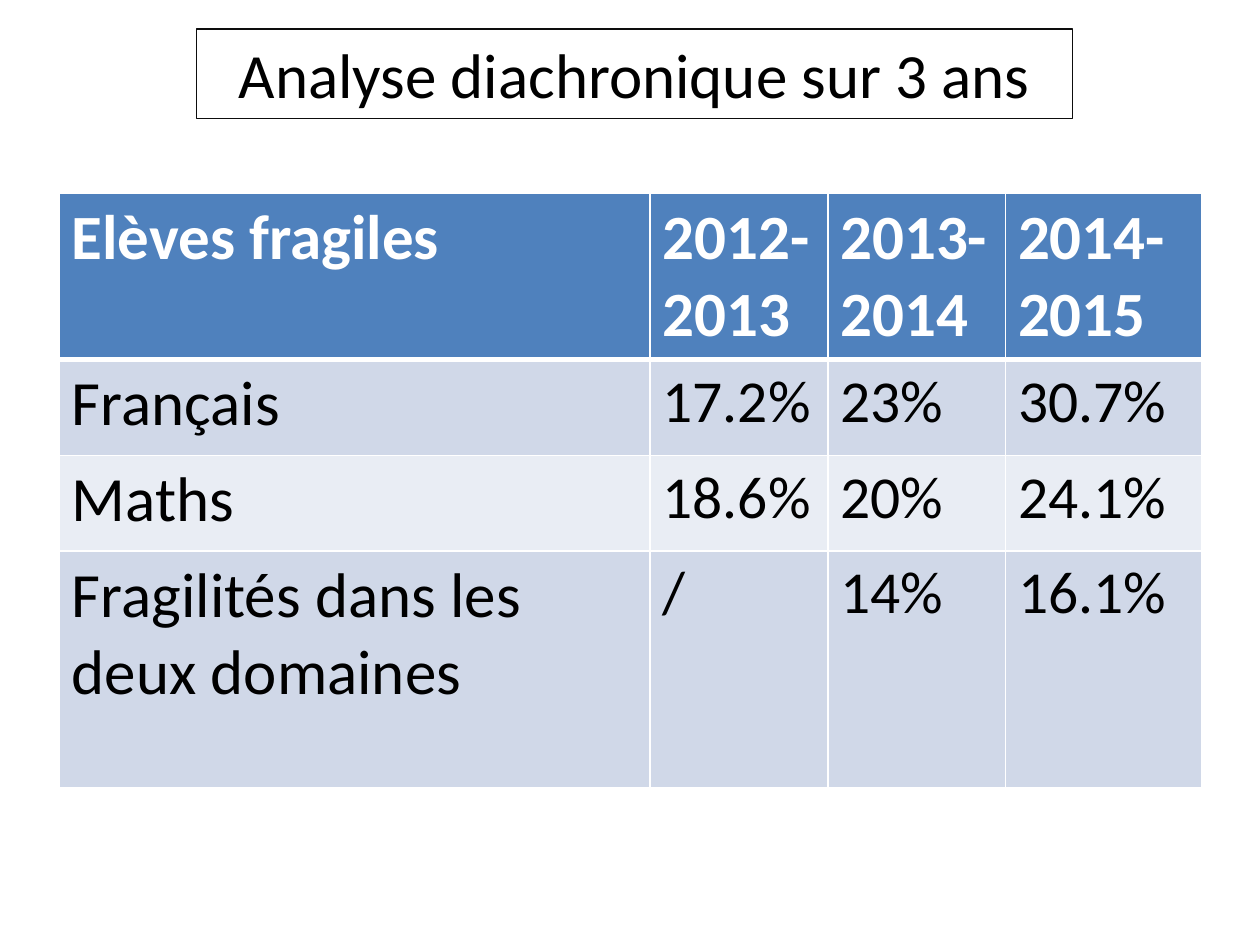
from dataclasses import dataclass

from lxml.etree import SubElement
from pptx import Presentation
from pptx.dml.color import RGBColor
from pptx.enum.text import MSO_ANCHOR, MSO_AUTO_SIZE, PP_ALIGN
from pptx.oxml.ns import qn
from pptx.util import Inches, Pt


@dataclass(frozen=True)
class Theme:
    font: str = "Calibri"
    label_size: int = 36
    value_size: int = 34
    text: str = "000000"
    outline: str = "0D0D0D"
    white: str = "FFFFFF"
    header: str = "4F81BD"
    bands: tuple[str, str] = ("D0D8E8", "E9EDF4")
    rule: float = 1
    header_rule: float = 3


@dataclass(frozen=True)
class ResultRow:
    label: str
    values: tuple[str, str, str]
    height: float = 0.76


THEME = Theme()
COLUMN_WIDTHS = (4.69, 1.41, 1.41, 1.56)
HEADER = ResultRow("Elèves fragiles", ("2012-2013", "2013-2014", "2014-2015"))
RESULTS = (
    ResultRow("Français", ("17.2%", "23%", "30.7%")),
    ResultRow("Maths", ("18.6%", "20%", "24.1%")),
    ResultRow("Fragilités dans les deux domaines", ("/", "14%", "16.1%"), 1.88),
)


def format_runs(text_frame, size: float, color: str, bold: bool = False) -> None:
    for paragraph in text_frame.paragraphs:
        for run in paragraph.runs:
            run.font.name = THEME.font
            run.font.size = Pt(size)
            run.font.bold = bold
            run.font.color.rgb = RGBColor.from_string(color)


def add_title(slide, wording: str) -> None:
    title = slide.shapes.title
    title.left, title.top = Inches(1.56), Inches(0.23)
    title.width, title.height = Inches(6.95), Inches(0.71)
    title.line.color.rgb = RGBColor.from_string(THEME.outline)
    title.line.width = Pt(0.75)
    frame = title.text_frame
    frame.text = wording
    frame.word_wrap = True
    frame.auto_size = MSO_AUTO_SIZE.NONE
    frame.vertical_anchor = MSO_ANCHOR.TOP
    frame.paragraphs[0].alignment = PP_ALIGN.CENTER
    format_runs(frame, THEME.label_size, THEME.text)


def set_borders(cell, top: float, bottom: float) -> None:
    """Draw white rules on all four sides, with widths in points."""
    properties = cell._tc.get_or_add_tcPr()
    widths = {"lnL": THEME.rule, "lnR": THEME.rule, "lnT": top, "lnB": bottom}
    for side, width in widths.items():
        line = SubElement(properties, qn(f"a:{side}"), w=str(Pt(width)))
        fill = SubElement(line, qn("a:solidFill"))
        SubElement(fill, qn("a:srgbClr"), val=THEME.white)


def fill_row(table, index: int, content: ResultRow) -> None:
    is_header = index == 0
    background = THEME.header if is_header else THEME.bands[(index - 1) % 2]
    color = THEME.white if is_header else THEME.text
    top = THEME.header_rule if index == 1 else THEME.rule
    bottom = THEME.header_rule if is_header else THEME.rule
    table.rows[index].height = Inches(content.height)
    for column, wording in enumerate((content.label, *content.values)):
        cell = table.cell(index, column)
        set_borders(cell, top, bottom)
        cell.fill.solid()
        cell.fill.fore_color.rgb = RGBColor.from_string(background)
        cell.text_frame.text = wording
        size = THEME.label_size if is_header or column == 0 else THEME.value_size
        format_runs(cell.text_frame, size, color, bold=is_header)


def add_results(slide) -> None:
    rows = (HEADER, *RESULTS)
    height = Inches(4.71)
    frame = slide.shapes.add_table(
        len(rows), len(COLUMN_WIDTHS),
        Inches(0.47), Inches(1.53), Inches(sum(COLUMN_WIDTHS)), height,
    )
    for column, width in zip(frame.table.columns, COLUMN_WIDTHS):
        column.width = Inches(width)
    for index, content in enumerate(rows):
        fill_row(frame.table, index, content)
    frame.height = height  # the header grows to two lines


def main() -> None:
    presentation = Presentation()
    presentation.slide_width, presentation.slide_height = Inches(10), Inches(7.5)
    slide = presentation.slides.add_slide(presentation.slide_layouts[5])
    add_title(slide, "Analyse diachronique sur 3 ans")
    add_results(slide)
    presentation.save("out.pptx")


if __name__ == "__main__":
    main()
